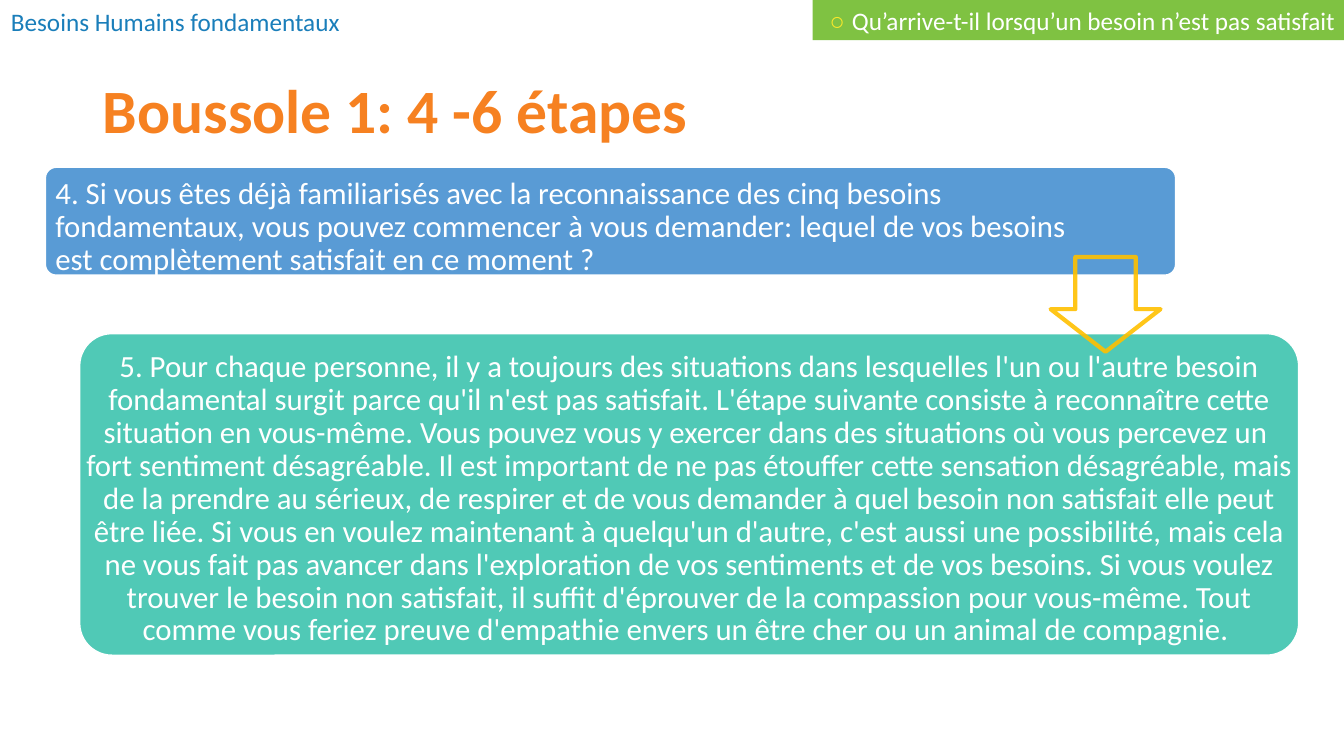
import pptx
import pptx.dml.color
import pptx.enum.shapes
import pptx.enum.text
import pptx.util
from lxml import etree
from pptx.util import Inches

SHAPE = pptx.enum.shapes.MSO_SHAPE
ALIGN = pptx.enum.text.PP_ALIGN
ANCHOR = pptx.enum.text.MSO_ANCHOR

COLORS = {
    "white": "FFFFFF",
    "header": "1A7EBA",
    "title": "F68121",
    "step4": "599BD5",
    "step5": "50C9B6",
    "arrow": "FFC000",
    "topic": "7FC242",
    "bullet": "FBE82A",
}

STEP_4 = [
    "4. Si vous êtes déjà familiarisés avec la reconnaissance des cinq besoins "
    "fondamentaux, vous pouvez commencer à vous demander: lequel de vos besoins "
    "est complètement satisfait en ce moment ?",
]
STEP_5 = [
    "5. Pour chaque personne, il y a toujours des situations dans lesquelles l'un ou "
    "l'autre besoin fondamental surgit parce qu'il n'est pas satisfait. L'étape suivante "
    "consiste à reconnaître cette situation en vous-même. Vous pouvez vous y exercer dans "
    "des situations où vous percevez un ",
    "fort sentiment désagréable. Il est important de ne pas étouffer cette sensation "
    "désagréable, mais de la prendre au sérieux, de respirer et de vous demander à quel "
    "besoin non satisfait elle peut être liée. Si vous en voulez maintenant à quelqu'un "
    "d'autre, c'est aussi une possibilité, mais cela ne vous fait pas avancer dans "
    "l'exploration de vos sentiments et de vos besoins. Si vous voulez trouver le besoin "
    "non satisfait, il suffit d'éprouver de la compassion pour vous-même. Tout comme vous "
    "feriez preuve d'empathie envers un être cher ou un animal de compagnie. ",
]


def rgb(color):
    return pptx.dml.color.RGBColor.from_string(COLORS[color])


def box(*inches):
    return [Inches(value) for value in inches]


def set_font(font, size, color, name="Calibri", bold=False):
    font.name = name
    font.size = pptx.util.Pt(size)
    font.bold = bold
    font.color.rgb = rgb(color)


def add_panel(slide, kind, place, fill, outline=None):
    panel = slide.shapes.add_shape(kind, *box(*place))
    panel.shadow.inherit = False
    panel.fill.solid()
    panel.fill.fore_color.rgb = rgb(fill)
    if outline:
        panel.line.color.rgb = rgb(outline)
        panel.line.width = pptx.util.Pt(1)
    else:
        panel.line.fill.background()
    return panel


def add_banner(slide, place, fill, runs, align):
    banner = add_panel(slide, SHAPE.RECTANGLE, place, fill)
    paragraph = banner.text_frame.paragraphs[0]
    paragraph.alignment = align
    for text, color, name in runs:
        run = paragraph.add_run()
        run.text = text
        set_font(run.font, 18, color, name)


def add_title(slide, text):
    title = slide.shapes.title
    title.left, title.top, title.width, title.height = box(0.92, 0.4, 11.5, 1.45)
    title.text_frame.vertical_anchor = ANCHOR.MIDDLE
    heading = title.text_frame.paragraphs[0]
    heading.text = text
    heading.alignment = ALIGN.LEFT
    heading.line_spacing = 0.9
    set_font(heading.font, 44, "title", bold=True)


def add_step(slide, panel_place, text_place, fill, lines, align):
    panel = add_panel(slide, SHAPE.ROUNDED_RECTANGLE, panel_place, fill, "white")
    panel.adjustments[0] = 0.1
    frame = slide.shapes.add_textbox(*box(*text_place)).text_frame
    frame.word_wrap = True
    frame.vertical_anchor = ANCHOR.MIDDLE
    frame.margin_left = frame.margin_right = Inches(0.05)
    frame.margin_top = frame.margin_bottom = Inches(0.05)
    step = frame.paragraphs[0]
    step.text = "\n".join(lines)
    step.alignment = align
    step.line_spacing = 0.89
    step.space_after = pptx.util.Pt(8)
    set_font(step.font, 22, "white")


def add_down_arrow(slide, place):
    arrow = slide.shapes.add_shape(SHAPE.DOWN_ARROW, *box(*place))
    arrow.shadow.inherit = False
    arrow.adjustments[0] = 0.55
    arrow.adjustments[1] = 0.45
    arrow.fill.background()
    arrow.line.color.rgb = rgb("arrow")
    arrow.line.width = pptx.util.Pt(3)
    tint = arrow.line._ln.find(".//" + pptx.oxml.ns.qn("a:srgbClr"))
    etree.SubElement(tint, pptx.oxml.ns.qn("a:alpha"), val="90000")


def main():
    deck = pptx.Presentation()
    deck.slide_width, deck.slide_height = box(13.33, 7.5)
    slide = deck.slides.add_slide(deck.slide_layouts[5])

    add_banner(slide, (0.01, 0.01, 3.55, 0.4), "white",
               [("Besoins Humains fondamentaux", "header", "Calibri")], ALIGN.LEFT)
    add_title(slide, "Boussole 1: 4 -6 étapes")
    add_step(slide, (0.79, 3.31, 12.09, 3.19), (0.79, 3.39, 12.09, 3.13),
             "step5", STEP_5, ALIGN.CENTER)
    add_step(slide, (0.45, 1.66, 11.21, 1.07), (0.5, 1.71, 10.21, 1.09),
             "step4", STEP_4, ALIGN.LEFT)
    add_down_arrow(slide, (10.42, 2.55, 1.09, 0.94))
    add_banner(slide, (8.06, 0, 5.28, 0.4), "topic",
               [("○ ", "bullet", "Arial"),
                ("Qu’arrive-t-il lorsqu’un besoin n’est pas satisfait", "white", "Calibri")],
               ALIGN.RIGHT)

    deck.save("out.pptx")


if __name__ == "__main__":
    main()
